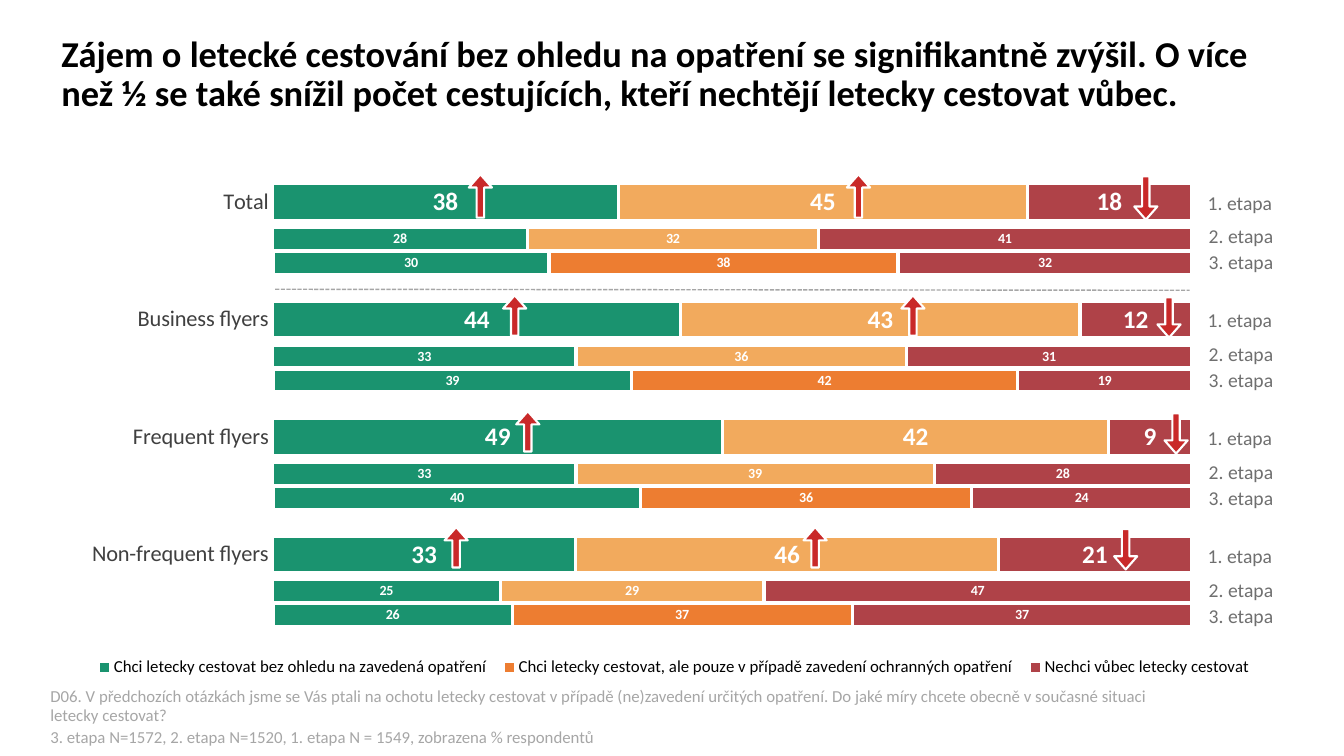
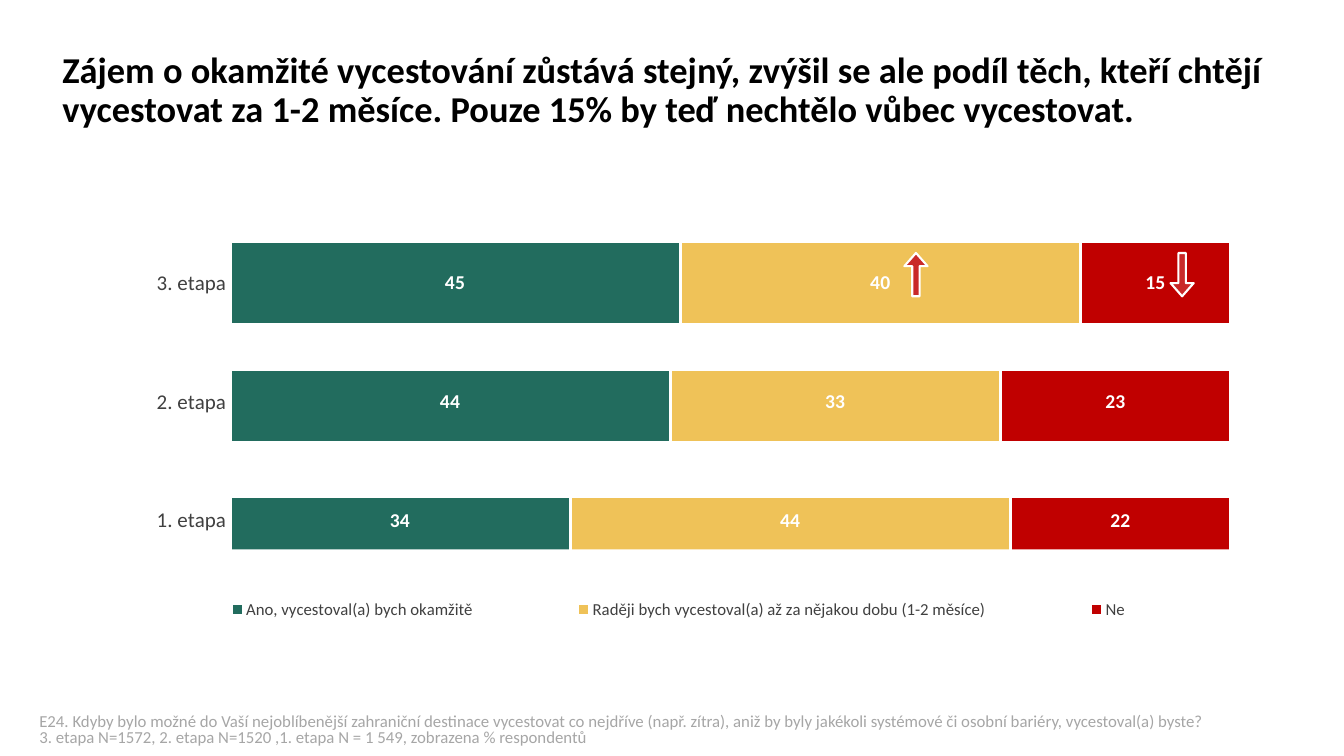
from lxml.etree import SubElement as Sub
from pptx import Presentation
from pptx.chart.data import CategoryChartData as Data
from pptx.dml.color import RGBColor as Rgb
from pptx.enum.chart import XL_CHART_TYPE as Kind, XL_LABEL_POSITION as Spot
from pptx.enum.chart import XL_LEGEND_POSITION as Side, XL_TICK_MARK as Tick
from pptx.enum.dml import MSO_LINE as Dash
from pptx.enum.shapes import MSO_CONNECTOR as Link, MSO_SHAPE as Shape
from pptx.enum.text import MSO_ANCHOR as Anchor
from pptx.oxml import parse_xml
from pptx.oxml.ns import nsdecls, qn
from pptx.util import Emu, Pt

SCALE = 9144
FONT = "Calibri"
BLACK, WHITE, DARK = "000000", "FFFFFF", "404040"
NOTE, STAGE, RED = "A6A6A6", "6F6F6F", "C92929"
PALE = ["1A936F", "F2AA5D", "AF4248"]
DEEP = ["1A936F", "ED7D31", "AF4248"]
TRIP = ["226C5E", "EFC258", "C00000"]


def px(*nums):
    """Turn px lengths into EMU."""
    return [Emu(n * SCALE) for n in nums]


def paint(obj, hue):
    """Give a font, fill or line one solid colour."""
    if hasattr(obj, "solid"):
        obj.solid()
        obj.fore_color.rgb = Rgb.from_string(hue)
    else:
        obj.color.rgb = Rgb.from_string(hue)


def style(font, size, hue, bold=False):
    """Set the face, size, colour and weight of a font."""
    font.name, font.size, font.bold = FONT, Pt(size), bold
    paint(font, hue)


def text(slide, box, paras, size, hue, bold=False, lead=0.9,
         anchor=Anchor.TOP, inset=(10, 5, 10, 5)):
    """Place a text box; a tuple in paras holds lines of one paragraph."""
    frame = slide.shapes.add_textbox(*px(*box)).text_frame
    frame.word_wrap, frame.vertical_anchor = True, anchor
    (frame.margin_left, frame.margin_top,
     frame.margin_right, frame.margin_bottom) = px(*inset)
    for i, lines in enumerate(paras):
        para = frame.add_paragraph() if i else frame.paragraphs[0]
        para.line_spacing = lead
        for j, line in enumerate(lines):
            if j:
                para.add_line_break()
            run = para.add_run()
            run.text = line
            style(run.font, size, hue, bold)


def title(slide, left, top, words):
    """Place the bold slide title."""
    text(slide, (left, top, 1229, 131), [(words,)], 26, BLACK, True,
         anchor=Anchor.MIDDLE)


def notes(slide, left, top, ask, base):
    """Place the question and the sample line at the foot."""
    inset = (0, 4, 0, 0)
    text(slide, (left, top, 1240, 43), [ask], 12, NOTE,
         anchor=Anchor.BOTTOM, inset=inset)
    text(slide, (left, 719, 1249, 24), [(base,)], 12, NOTE, inset=inset)


def arrow(slide, left, top, up, high=40):
    """Place a red arrow that marks a rise or a fall."""
    kind = Shape.UP_ARROW if up else Shape.DOWN_ARROW
    mark = slide.shapes.add_shape(kind, *px(left, top, 23, high))
    mark.shadow.inherit = False
    mark.adjustments[0], mark.adjustments[1] = 0.32, 0.57
    paint(mark.fill, RED)
    paint(mark.line, WHITE)
    mark.line.width = Pt(1.5)


def mask(slide, left, top):
    """Place a white strip that trims the bars under it."""
    strip = slide.shapes.add_shape(Shape.RECTANGLE, *px(left, top, 1141, 24))
    strip.shadow.inherit = False
    paint(strip.fill, WHITE)
    strip.line.fill.background()


def layout(host, spot, area, inner=False):
    """Fix the place of a plot or legend as shares of its chart."""
    for old in host.findall(qn("c:layout")):
        host.remove(old)
    node = parse_xml(f"<c:layout {nsdecls('c')}/>")
    host.insert(spot, node)
    man = Sub(node, qn("c:manualLayout"))
    pairs = [("layoutTarget", "inner")] if inner else []
    pairs += [("xMode", "edge"), ("yMode", "edge")]
    pairs += zip("xywh", area)
    for tag, val in pairs:
        Sub(man, qn("c:" + tag)).set("val", str(val))


def clear(chart):
    """Make the chart and plot backgrounds see-through."""
    blank = f"<c:spPr {nsdecls('c', 'a')}><a:noFill/><a:ln><a:noFill/></a:ln></c:spPr>"
    body = chart.element.find(qn("c:chart"))
    body.addnext(parse_xml(blank))
    body.find(qn("c:plotArea")).append(parse_xml(blank))


def bars(slide, box, cats, rows, hues, gap, size, area,
         names=("Series 1", "Series 2", "Series 3"), axis=None, key=None,
         ink=BLACK):
    """Place a full-width stacked bar chart."""
    data = Data()
    data.categories = cats
    for name, row in zip(names, rows):
        data.add_series(name, row)
    chart = slide.shapes.add_chart(Kind.BAR_STACKED_100, *px(*box), data).chart
    style(chart.font, 18, BLACK)
    clear(chart)
    chart.has_title = False
    plot = chart.plots[0]
    plot.gap_width, plot.overlap, plot.vary_by_categories = gap, 100, False
    layout(chart.element.find(".//" + qn("c:plotArea")), 0, area, True)
    cat, val = chart.category_axis, chart.value_axis
    cat.reverse_order = True
    cat.has_major_gridlines = val.has_major_gridlines = False
    val.minimum_scale, val.maximum_scale, val.major_unit = 0, 1, 0.2
    val.visible = False
    cat.visible = axis is not None
    if axis:
        cat.major_tick_mark = cat.minor_tick_mark = Tick.NONE
        cat.format.line.fill.background()
        style(cat.tick_labels.font, axis, DARK)
    for ser, hue in zip(plot.series, hues):
        paint(ser.format.fill, hue)
        paint(ser.format.line, WHITE)
        ser.format.line.width = Pt(2.25)
        tags = ser.data_labels
        tags.show_value, tags.position = True, Spot.CENTER
        tags.number_format, tags.number_format_is_linked = "0", False
        style(tags.font, size, WHITE, True)
    chart.has_legend = key is not None
    if key:
        chart.legend.position = Side.BOTTOM
        chart.legend.include_in_layout = False
        style(chart.legend.font, 12, ink)
        layout(chart.legend._element, 1, key)


def stages(slide, left, top, step):
    """Place the stage names beside each group of bars."""
    for i in range(4):
        y = top + i * step
        text(slide, (left, y, 103, 38), [("1. etapa",)], 14, STAGE, lead=1.3)
        text(slide, (left + 1, y + 38, 107, 61),
             [("2. etapa",), ("3. etapa",)], 14, STAGE, lead=1.1)


def rule(slide, left, top, wide):
    """Place the dashed line under the total."""
    line = slide.shapes.add_connector(
        Link.STRAIGHT, *px(left, top, left + wide, top + 1))
    paint(line.line, NOTE)
    line.line.width, line.line.dash_style = Pt(1), Dash.SQUARE_DOT
    Sub(line._element.spPr, qn("a:effectLst"))


def flyers(slide):
    """Build the slide on interest in air travel."""
    title(slide, 51, 9, "Zájem o letecké cestování bez ohledu na opatření se "
          "signifikantně zvýšil. O více než ½ se také snížil počet "
          "cestujících, kteří nechtějí letecky cestovat vůbec.")
    bars(slide, (2, 126, 1188, 488),
         ["Total", "Business flyers", "Frequent flyers", "Non-frequent flyers"],
         [(38, 44, 49, 33), (45, 43, 42, 46), (18, 12, 9, 21)],
         PALE, 218, 18, (0.226, 0.033, 0.767, 0.956), axis=16)
    cats = ["1", "2", "3", "4"]
    bars(slide, (109, 179, 1188, 518), cats,
         [(28, 33, 33, 25), (32, 36, 39, 29), (41, 31, 28, 47)],
         PALE, 416, 10, (0.136, 0, 0.767, 0.899))
    bars(slide, (68, 203, 1188, 518), cats,
         [(30, 39, 40, 26), (38, 42, 36, 37), (32, 19, 24, 37)],
         DEEP, 416, 10, (0.171, 0, 0.767, 0.899),
         names=("Chci letecky cestovat bez ohledu na zavedená opatření",
                "Chci letecky cestovat, ale pouze v případě zavedení "
                "ochranných opatření", "Nechci vůbec letecky cestovat"),
         key=(0.016, 0.861, 0.98, 0.05))
    marks = [(173, 43, (465, 840), 1125), (293, 40, (499, 894), 1148),
             (408, 40, (512,), 1155), (523, 40, (441, 797), 1105)]
    for top, high, ups, down in marks:
        for left in ups:
            arrow(slide, left, top, True, high)
        arrow(slide, down, top + 2, False, high)
    stages(slide, 1188, 177, 117)
    rule(slide, 273, 287, 907)
    notes(slide, 50, 676,
          ("D06. V předchozích otázkách jsme se Vás ptali na ochotu letecky "
           "cestovat v případě (ne)zavedení určitých opatření. Do jaké míry "
           "chcete obecně v současné situaci ", "letecky cestovat?"),
          "3. etapa N=1572, 2. etapa N=1520, 1. etapa N = 1549, "
          "zobrazena % respondentů")


def trips(slide):
    """Build the slide on readiness to travel at once."""
    bars(slide, (39, 222, 1183, 505), ["3. etapa", "2. etapa", "1. etapa"],
         [(45, 44, 34), (40, 33, 44), (15, 23, 22)],
         TRIP, 44, 14, (0.16, 0, 0.84, 0.699),
         names=("Ano, vycestoval(a) bych okamžitě",
                "Raději bych vycestoval(a) až za nějakou dobu (1-2 měsíce)",
                "Ne"),
         axis=15, key=(0.078, 0.733, 0.917, 0.05), ink=DARK)
    title(slide, 52, 25, "Zájem o okamžité vycestování zůstává stejný, zvýšil "
          "se ale podíl těch, kteří chtějí vycestovat za 1-2 měsíce. Pouze "
          "15% by teď nechtělo vůbec vycestovat.")
    for left, top in [(113, 545), (139, 470), (155, 344)]:
        mask(slide, left, top)
    arrow(slide, 897, 251, True, 43)
    arrow(slide, 1161, 251, False, 43)
    notes(slide, 39, 682,
          ("E24. Kdyby bylo možné do Vaší nejoblíbenější zahraniční destinace "
           "vycestovat co nejdříve (např. zítra), aniž by byly jakékoli "
           "systémové či osobní bariéry, vycestoval(a) byste?",),
          "3. etapa N=1572, 2. etapa N=1520 ,1. etapa N = 1 549, "
          "zobrazena % respondentů")


def main():
    """Build and save the deck."""
    deck = Presentation()
    deck.slide_width, deck.slide_height = px(1333, 750)
    for build in (flyers, trips):
        build(deck.slides.add_slide(deck.slide_layouts[6]))
    deck.save("out.pptx")


if __name__ == "__main__":
    main()
